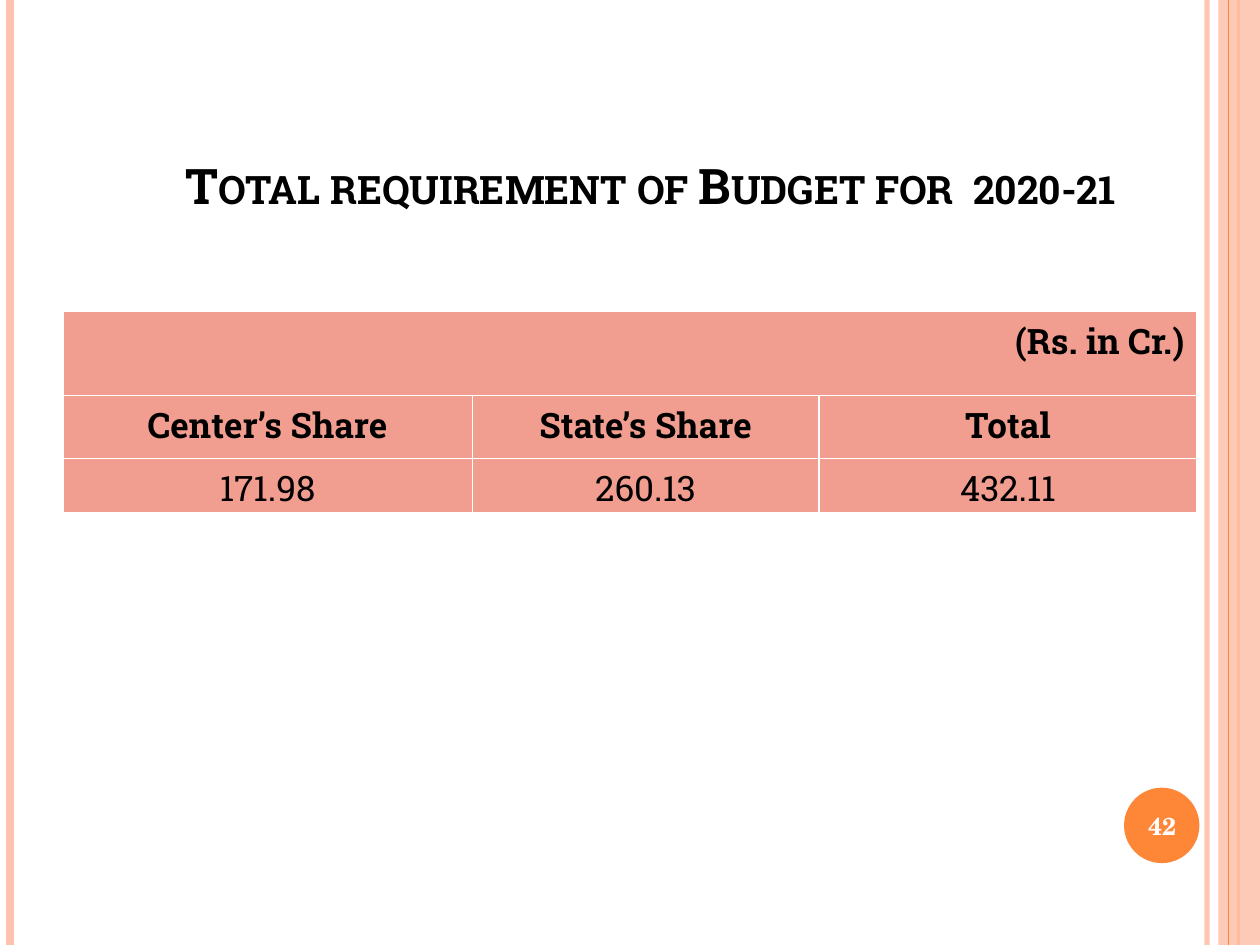
from lxml.etree import SubElement
from pptx import Presentation
from pptx.dml.color import RGBColor
from pptx.enum.shapes import MSO_CONNECTOR, MSO_SHAPE
from pptx.enum.text import MSO_ANCHOR, PP_ALIGN
from pptx.oxml.ns import qn
from pptx.util import Cm, Pt

# Content
TITLE = "Total requirement of Budget for  2020-21"
UNIT = "(Rs. in Cr.)"
HEADERS = ["Center’s Share", "State’s Share", "Total"]
VALUES = ["171.98", "260.13", "432.11"]
PAGE_NUMBER = "42"

# Format
COLORS = {"black": "000000", "white": "FFFFFF", "peach": "FEC3AE",
          "orange": "FE8637", "salmon": "F19E91"}
SLAB, SCHOLA = "Roboto Slab", "TeX Gyre Schola"
WIDTH, HEIGHT = 25.4, 19.05
COLUMN_WIDTHS = [8.25, 6.99, 7.62]
ROW_HEIGHTS = [1.7, 1.27, 0.99]

# Vertical stripes: x in cm, colour, width in points, opacity in percent
STRIPES_BELOW = [(24.33, "peach", 3, 93), (0.21, "peach", 4.5, 100),
                 (24.97, "orange", 1.5, 100)]
STRIPES_ABOVE = [(24.77, "orange", 0.75, 100)]


def rgb(name):
    return RGBColor.from_string(COLORS[name])


def set_opacity(element, percent):
    color = next(element.iter(qn("a:srgbClr")))
    SubElement(color, qn("a:alpha"), val=str(percent * 1000))


def write(frame, text, *, size, font=SLAB, color="black", bold=True,
          align=PP_ALIGN.CENTER, small_caps=False):
    para = frame.paragraphs[0]
    para.alignment = align
    span = para.add_run()
    span.text = text
    span.font.size = Pt(size)
    span.font.name = font
    span.font.bold = bold
    span.font.color.rgb = rgb(color)
    if small_caps:
        span.font._element.set("cap", "small")


def add_stripe(page, x, color, width, opacity):
    stripe = page.shapes.add_connector(
        MSO_CONNECTOR.STRAIGHT, Cm(x), Cm(0), Cm(x), Cm(HEIGHT))
    stripe.line.color.rgb = rgb(color)
    stripe.line.width = Pt(width)
    properties = stripe._element.spPr
    if opacity < 100:
        set_opacity(properties, opacity)
    SubElement(properties, qn("a:effectLst"))


def add_block(page, kind, color, left, top, width, height):
    block = page.shapes.add_shape(kind, Cm(left), Cm(top), Cm(width), Cm(height))
    block.shadow.inherit = False
    block.fill.solid()
    block.fill.fore_color.rgb = rgb(color)
    block.line.fill.background()
    return block


def add_box(page, left, top, width, height, anchor):
    box = page.shapes.add_textbox(Cm(left), Cm(top), Cm(width), Cm(height))
    box.text_frame.word_wrap = True
    box.text_frame.vertical_anchor = anchor
    return box.text_frame


def add_budget_table(page):
    table = page.shapes.add_table(
        len(ROW_HEIGHTS), len(COLUMN_WIDTHS), Cm(1.27), Cm(6.27),
        Cm(sum(COLUMN_WIDTHS)), Cm(sum(ROW_HEIGHTS))).table
    table.horz_banding = False
    for column, width in zip(table.columns, COLUMN_WIDTHS):
        column.width = Cm(width)
    for row, height in zip(table.rows, ROW_HEIGHTS):
        row.height = Cm(height)
    for cell in table.iter_cells():
        cell.fill.solid()
        cell.fill.fore_color.rgb = rgb("salmon")

    unit_cell = table.cell(0, 0)
    unit_cell.merge(table.cell(0, len(COLUMN_WIDTHS) - 1))
    write(unit_cell.text_frame, UNIT, size=20, align=PP_ALIGN.RIGHT)
    for column, (header, value) in enumerate(zip(HEADERS, VALUES)):
        write(table.cell(1, column).text_frame, header, size=20)
        write(table.cell(2, column).text_frame, value, size=20, bold=False)


def main():
    deck = Presentation()
    deck.slide_width, deck.slide_height = Cm(WIDTH), Cm(HEIGHT)
    page = deck.slides.add_slide(deck.slide_layouts[6])

    # Side decoration
    for stripe in STRIPES_BELOW:
        add_stripe(page, *stripe)
    band = add_block(page, MSO_SHAPE.RECTANGLE, "peach", 24.56, 0, 0.84, HEIGHT)
    set_opacity(band._element.spPr, 87)
    for stripe in STRIPES_ABOVE:
        add_stripe(page, *stripe)

    # Page number badge
    add_block(page, MSO_SHAPE.OVAL, "orange", 22.66, 15.88, 1.52, 1.52)
    number = add_box(page, 22.58, 15.93, 1.7, 1.45, MSO_ANCHOR.MIDDLE)
    write(number, PAGE_NUMBER, size=14, font=SCHOLA, color="white")

    # Title and table
    title = add_box(page, 0.84, 2.11, 24.56, 2.34, MSO_ANCHOR.BOTTOM)
    write(title, TITLE, size=28, small_caps=True)
    add_budget_table(page)

    deck.save("out.pptx")


if __name__ == "__main__":
    main()
